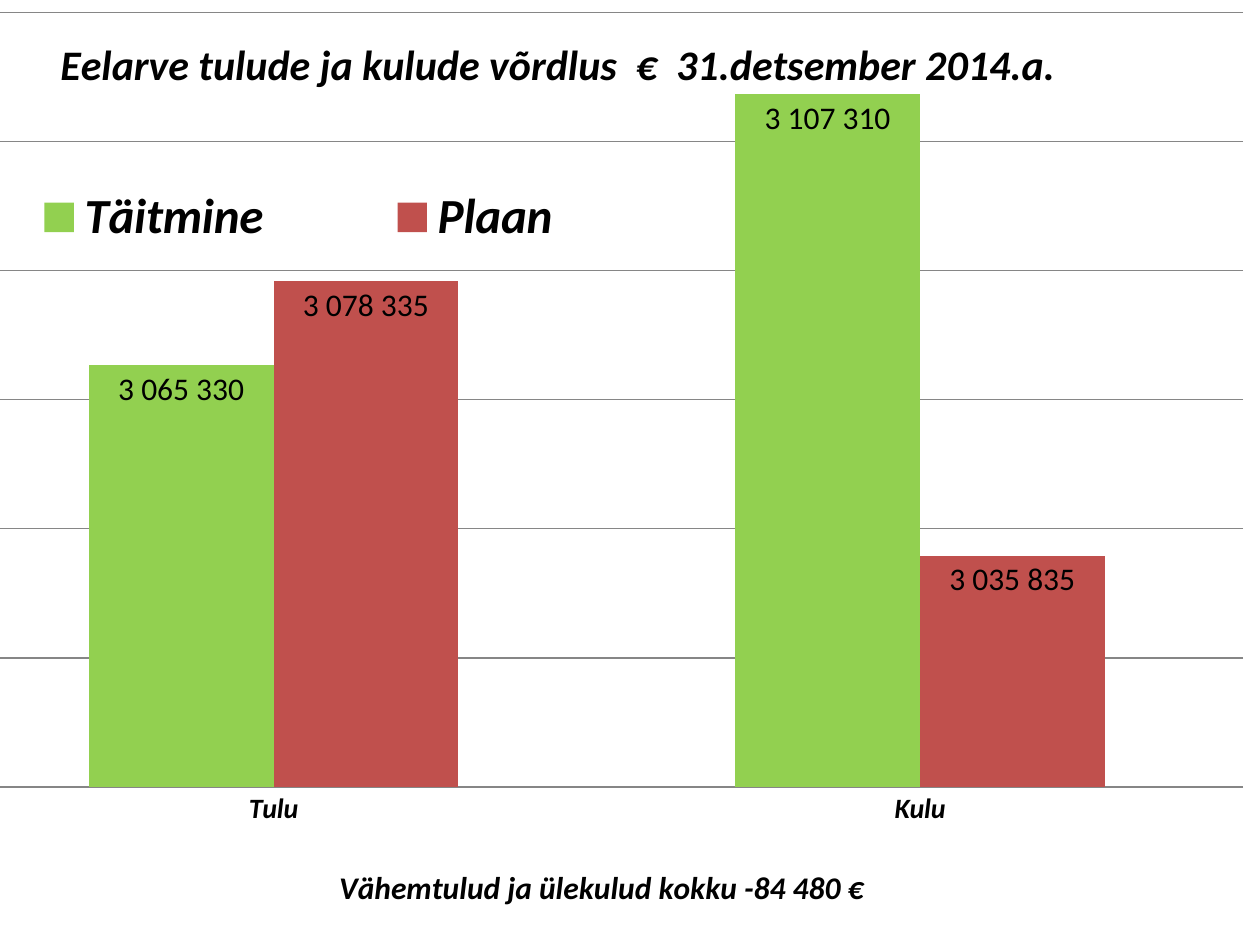
from lxml.etree import SubElement
from pptx import Presentation
from pptx.chart.data import CategoryChartData
from pptx.dml.color import RGBColor
from pptx.enum.chart import XL_CHART_TYPE, XL_LABEL_POSITION, XL_LEGEND_POSITION, XL_TICK_MARK
from pptx.oxml.ns import qn
from pptx.util import Inches, Pt

CATEGORIES = ["Tulu", "Kulu"]
SERIES = {
    "Täitmine": ((3065330, 3107310), "92D050"),
    "Plaan": ((3078335, 3035835), "C0504D"),
}
TITLE = "Eelarve tulude ja kulude võrdlus  €  31.detsember 2014.a."
AXIS_TITLE = "Vähemtulud ja ülekulud kokku -84 480 €"
NUMBER_FORMAT = r"0\ 000\ 000"


def color(hex_string):
    return RGBColor.from_string(hex_string)


def style_font(font, size, emphasized=True):
    font.name = "Calibri"
    font.size = Pt(size)
    font.bold = font.italic = emphasized
    font.color.rgb = color("000000")


def set_title(title, text, size):
    title.text_frame.text = text
    style_font(title.text_frame.paragraphs[0].runs[0].font, size)


def place(chart, element_name, inner=False, **fractions):
    """Position a chart part by fractions (x, y, w, h) of the chart's size."""
    element = chart._chartSpace.xpath(f".//{element_name}")[0]
    for old_layout in element.findall(qn("c:layout")):
        element.remove(old_layout)
    layout = SubElement(element, qn("c:layout"))
    manual = SubElement(layout, qn("c:manualLayout"))
    if inner:
        SubElement(manual, qn("c:layoutTarget")).set("val", "inner")
    for key in ("x", "y"):
        SubElement(manual, qn(f"c:{key}Mode")).set("val", "edge")
    for key, value in fractions.items():
        SubElement(manual, qn(f"c:{key}")).set("val", str(value))
    overlay = element.find(qn("c:overlay"))
    if overlay is None:
        element.insert(0, layout)
    else:
        overlay.addprevious(layout)


def add_budget_chart(slide):
    data = CategoryChartData(number_format="0")
    data.categories = CATEGORIES
    for name, (values, _) in SERIES.items():
        data.add_series(name, values)
    frame = slide.shapes.add_chart(
        XL_CHART_TYPE.COLUMN_CLUSTERED,
        Inches(-1.14), Inches(0), Inches(11.14), Inches(7.5), data)
    chart = frame.chart
    style_font(chart.font, 10, emphasized=False)
    return chart


def style_columns(chart):
    plot = chart.plots[0]
    plot.gap_width = 150
    plot.overlap = 0
    plot.vary_by_categories = False
    for series in plot.series:
        series.format.fill.solid()
        series.format.fill.fore_color.rgb = color(SERIES[series.name][1])
        series.invert_if_negative = False
        labels = series.data_labels
        labels.show_value = True
        labels.position = XL_LABEL_POSITION.INSIDE_END
        labels.number_format = NUMBER_FORMAT
        labels.number_format_is_linked = False
        style_font(labels.font, 18, emphasized=False)


def style_axes(chart):
    value_axis = chart.value_axis
    value_axis.minimum_scale = 3000000
    value_axis.maximum_scale = 3120000
    value_axis.major_unit = 20000
    value_axis.visible = False
    category_axis = chart.category_axis
    category_axis.major_tick_mark = XL_TICK_MARK.NONE
    style_font(category_axis.tick_labels.font, 16)
    set_title(category_axis.axis_title, AXIS_TITLE, 18)
    for line in (value_axis.major_gridlines.format.line, category_axis.format.line):
        line.color.rgb = color("868686")
        line.width = Pt(0.75)


def add_legend(chart):
    chart.has_legend = True
    chart.legend.position = XL_LEGEND_POSITION.RIGHT
    chart.legend.include_in_layout = False
    style_font(chart.legend.font, 28)


def main():
    presentation = Presentation()
    presentation.slide_width = Inches(10)
    presentation.slide_height = Inches(7.5)
    slide = presentation.slides.add_slide(presentation.slide_layouts[6])

    chart = add_budget_chart(slide)
    style_columns(chart)
    style_axes(chart)
    add_legend(chart)
    chart.has_title = True
    set_title(chart.chart_title, TITLE, 24)

    place(chart, "c:plotArea", inner=True, x=0.067, y=0.013, w=0.921, h=0.82)
    place(chart, "c:chart/c:title", x=0.14, y=0.03)
    place(chart, "c:catAx/c:title", x=0.34, y=0.91)
    place(chart, "c:legend", x=0.05, y=0.18, w=0.53, h=0.1)
    presentation.save("out.pptx")


if __name__ == "__main__":
    main()
